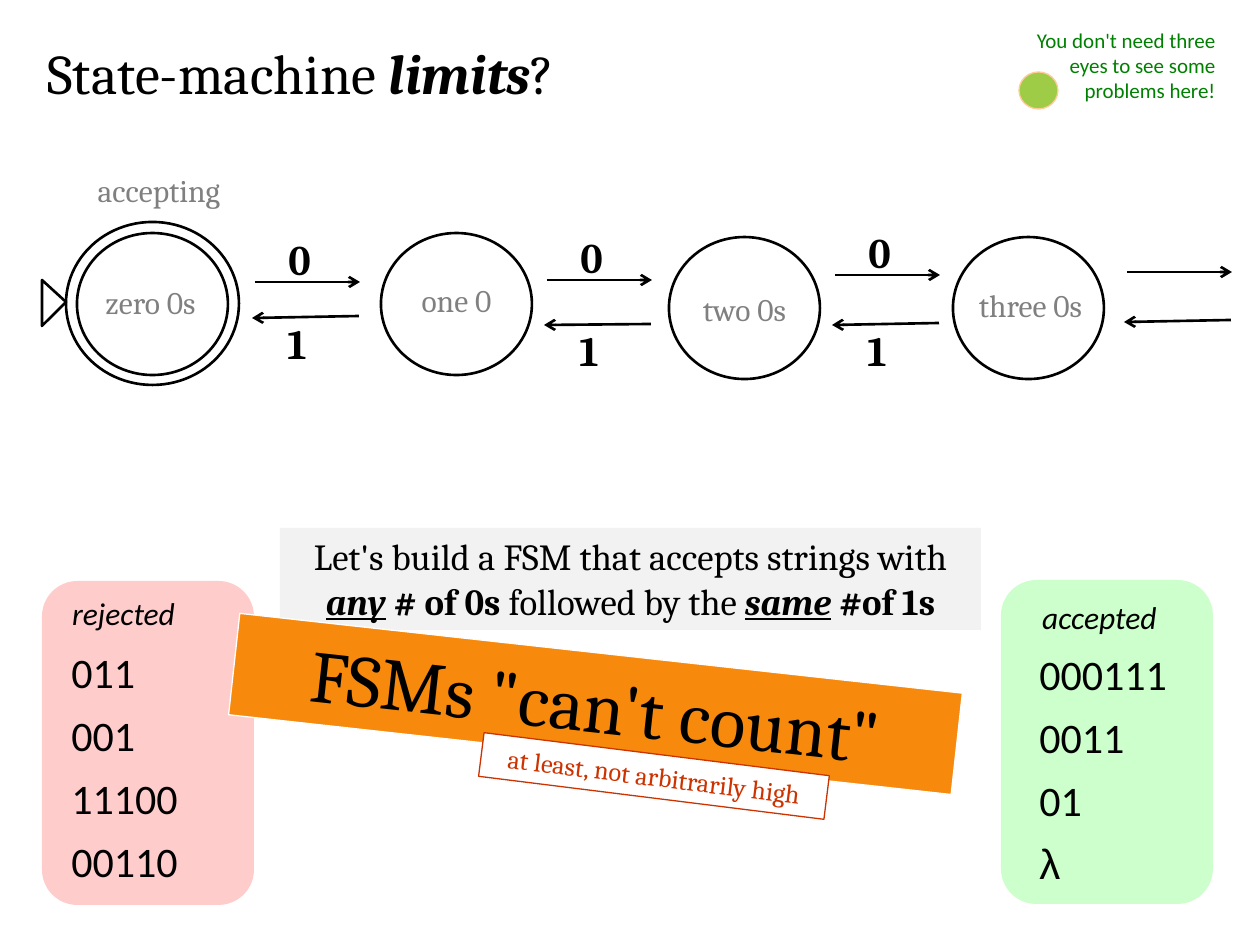
from lxml.etree import SubElement
from pptx import Presentation
from pptx.dml.color import RGBColor
from pptx.enum.shapes import MSO_CONNECTOR, MSO_SHAPE
from pptx.enum.text import MSO_ANCHOR, MSO_AUTO_SIZE, PP_ALIGN
from pptx.oxml.ns import qn
from pptx.util import Emu, Pt

PX = 914400 / 126
LEFT, CENTER, RIGHT = PP_ALIGN.LEFT, PP_ALIGN.CENTER, PP_ALIGN.RIGHT
color = RGBColor.from_string


def emu(*lengths):
    return [Emu(round(length * PX)) for length in lengths]


def write(box, spans, size, font="Cambria", ink="000000", align=LEFT, wrap=True):
    """Fill a box with runs; each span is (text, style letters from b, i, u)."""
    frame = box.text_frame
    frame.word_wrap = wrap
    frame.auto_size = MSO_AUTO_SIZE.NONE
    frame.vertical_anchor = MSO_ANCHOR.TOP
    para = frame.paragraphs[0]
    para.alignment = align
    for text, style in spans:
        span = para.add_run()
        span.text = text
        span.font.name = font
        span.font.size = Pt(size)
        span.font.color.rgb = color(ink)
        span.font.bold = "b" in style
        span.font.italic = "i" in style
        span.font.underline = "u" in style


deck = Presentation()
deck.slide_width, deck.slide_height = emu(1260, 945)
page = deck.slides.add_slide(deck.slide_layouts[5])
shapes = page.shapes

# Title
title = shapes.title
title.left, title.top, title.width, title.height = emu(35, 32, 880, 81)
write(title, [("State-machine ", ""), ("limits", "bi"), ("?", "")], 32)

# Panels, state circles and banners: kind, place, fill, line, line width, rotation
round_box, rect, oval = MSO_SHAPE.ROUNDED_RECTANGLE, MSO_SHAPE.RECTANGLE, MSO_SHAPE.OVAL
circles = [(77, 233), (381, 233), (669, 237), (953, 237)]
figures = [
    ("rejected", round_box, (42, 581, 212, 324), "FFCCCC", None, 0, 0),
    ("accepted", round_box, (1001, 580, 212, 324), "CCFFCC", None, 0, 0),
    ("task", rect, (280, 528, 701, 102), "F2F2F2", None, 0, 0),
    ("mascot", oval, (1019, 72, 39, 37), "9ECC46", "FFCC99", 0.75, 0),
    ("accepting ring", oval, (66, 222, 173, 163), None, "000000", 1.5, 0),
    *[(f"state {n}", oval, (x, y, 151, 142), None, "000000", 1.5, 0)
      for n, (x, y) in enumerate(circles)],
    ("verdict", rect, (232, 653, 727, 102), "F7890C", "FFFFFF", 0.75, 6.3),
    ("caveat", rect, (480, 754, 348, 44), "FFFFFF", "CC3300", 0.75, 7.1),
]
drawn = {}
for name, kind, place, fill, line, width, turn in figures:
    shape = drawn[name] = shapes.add_shape(kind, *emu(*place))
    shape.shadow.inherit = False
    shape.rotation = turn
    if fill:
        shape.fill.solid()
        shape.fill.fore_color.rgb = color(fill)
    else:
        shape.fill.background()
    if line:
        shape.line.color.rgb = color(line)
        shape.line.width = Pt(width)
    else:
        shape.line.fill.background()

write(drawn["task"], [
    ("Let's build a FSM that accepts strings with ", ""), ("any", "biu"), (" ", ""),
    ("# of 0s ", "b"), ("followed by the ", ""), ("same", "biu"), (" ", ""), ("#of 1s", "b"),
], 21, align=CENTER)
write(drawn["verdict"], [("FSMs \"can't count\"", "")], 42, align=CENTER)
write(drawn["caveat"], [("at least, not arbitrarily high", "")], 15, ink="CC3300", align=CENTER)

# Start marker
outline = shapes.build_freeform(42, 280, scale=PX)
outline.add_line_segments([(42, 326), (66, 302)], close=True)
start = outline.convert_to_shape()
start.shadow.inherit = False
start.fill.background()
start.line.color.rgb = color("000000")
start.line.width = Pt(1.5)

# State names and the remark at the top right
labels = [
    ("accepting", (57, 165, 204, 50)),
    ("zero 0s", (66, 277, 169, 50)),
    ("one 0", (372, 275, 169, 50)),
    ("two 0s", (660, 284, 169, 50)),
    ("three 0s", (946, 280, 169, 50)),
]
for text, place in labels:
    write(shapes.add_textbox(*emu(*place)), [(text, "")], 18, ink="808080", align=CENTER)
remark = shapes.add_textbox(*emu(1000, 21, 228, 89))
write(remark, [("You don't need three eyes to see some problems here!", "")],
      12, "Calibri", "008000", RIGHT)

# Transitions: left end, height of the 0 arrow, start and end of the 1 arrow, top of the 1
transitions = [
    (255, 282, 316, 318, 311),
    (547, 280, 324, 325, 318),
    (835, 275, 323, 325, 318),
    (1127, 272, 320, 322, None),
]
for x, ahead, back_from, back_to, one_top in transitions:
    for ends in [(x, ahead, x + 105, ahead), (x + 104, back_from, x - 3, back_to)]:
        arrow = shapes.add_connector(MSO_CONNECTOR.STRAIGHT, *emu(*ends))
        arrow.line.color.rgb = color("000000")
        arrow.line.width = Pt(1.5)
        SubElement(arrow.line._get_or_add_ln(), qn("a:tailEnd"), type="arrow")
        SubElement(arrow._element.spPr, qn("a:effectLst"))
    if one_top:
        for digit, left, top in [("0", x + 21, ahead - 55), ("1", x + 20, one_top)]:
            box = shapes.add_textbox(*emu(left, top, 50, 63))
            write(box, [(digit, "b")], 24, wrap=False)

# Example strings: heading with its place, then the list with its left, top and width
columns = [
    ("rejected", (50, 588, 147, 50), 59, 640, 147, ["011", "001", "11100", "00110"]),
    ("accepted", (1000, 592, 199, 50), 1027, 642, 199, ["000111", "0011", "01", "λ"]),
]
for heading, place, left, top, width, strings in columns:
    write(shapes.add_textbox(*emu(*place)), [(heading, "i")], 18, "Calibri", align=CENTER)
    for row, text in enumerate(strings):
        box = shapes.add_textbox(*emu(left, top + 63 * row, width, 63))
        write(box, [(text, "")], 24, "Arial" if text == "λ" else "Calibri")

deck.save("out.pptx")
